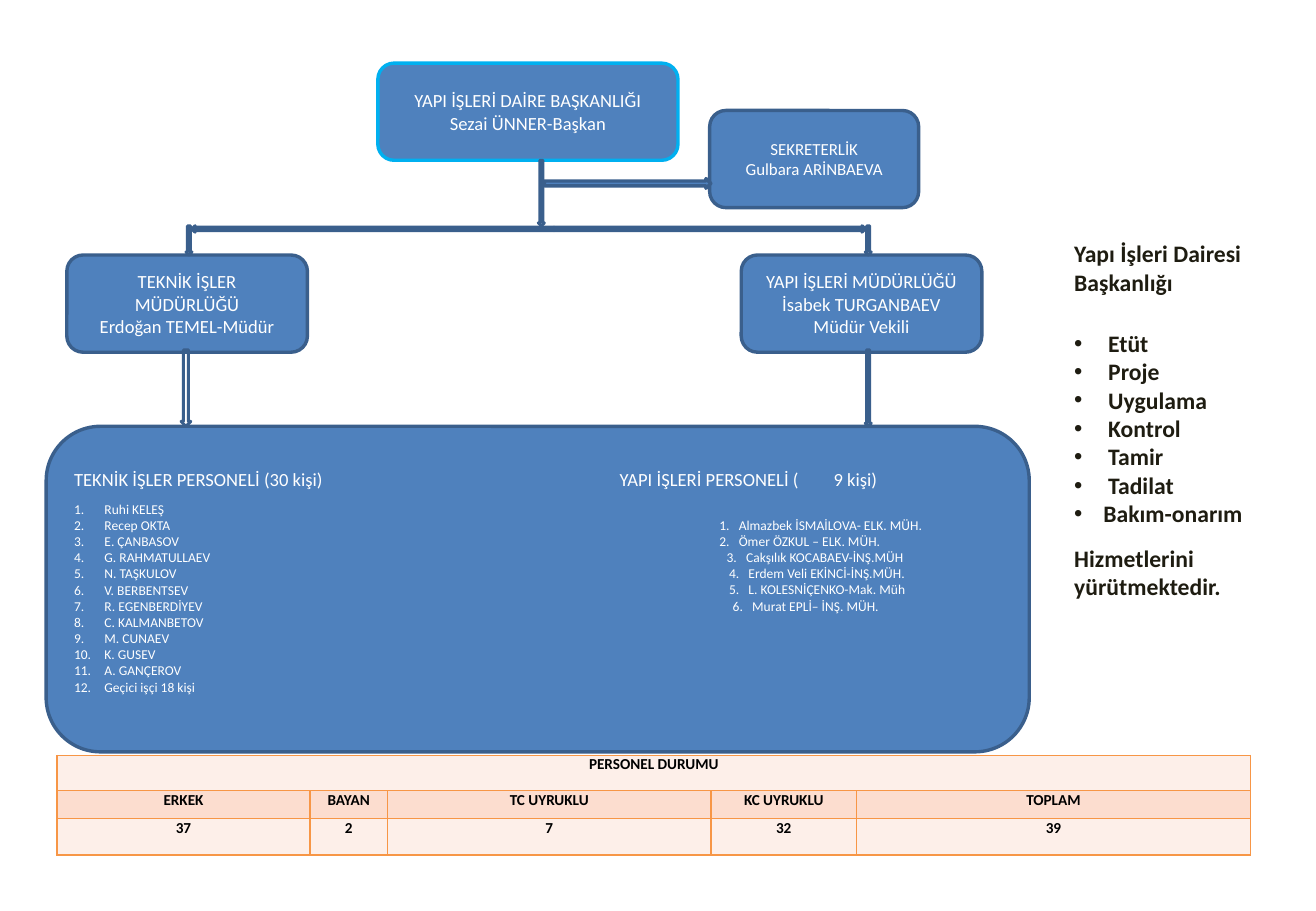
from lxml import etree
from pptx import Presentation
from pptx.dml.color import RGBColor
from pptx.enum.shapes import MSO_SHAPE
from pptx.enum.text import MSO_ANCHOR, PP_ALIGN
from pptx.oxml.ns import qn
from pptx.util import Inches, Pt

ROUNDED = MSO_SHAPE.ROUNDED_RECTANGLE
DOWN, LEFT, RIGHT = MSO_SHAPE.DOWN_ARROW, MSO_SHAPE.LEFT_ARROW, MSO_SHAPE.RIGHT_ARROW
MIDDLE, TOP = MSO_ANCHOR.MIDDLE, MSO_ANCHOR.TOP
CENTER = PP_ALIGN.CENTER

WHITE = RGBColor(0xFF, 0xFF, 0xFF)
BLACK = RGBColor(0x00, 0x00, 0x00)
INK = RGBColor(0x1E, 0x1C, 0x11)
BLUE = RGBColor(0x4F, 0x81, 0xBD)
NAVY = RGBColor(0x3A, 0x5F, 0x8C)
CYAN = RGBColor(0x00, 0xB0, 0xF0)
ORANGE = RGBColor(0xF7, 0x96, 0x46)
PEACH = RGBColor(0xFC, 0xDD, 0xCF)
PALE_PEACH = RGBColor(0xFD, 0xEF, 0xE9)

TECHNICAL_STAFF = ["Ruhi KELEŞ", "Recep OKTA", "E. ÇANBASOV", "G. RAHMATULLAEV",
                   "N. TAŞKULOV", "V. BERBENTSEV", "R. EGENBERDİYEV", "C. KALMANBETOV",
                   "M. CUNAEV", "K. GUSEV", "A. GANÇEROV", "Geçici işçi 18 kişi"]
# Name and left edge of its number
BUILDING_STAFF = [("Almazbek İSMAİLOVA- ELK. MÜH.", 0.82), ("Ömer ÖZKUL – ELK. MÜH.", 0.82),
                  ("Cakşılık KOCABAEV-İNŞ.MÜH", 0.88), ("Erdem Veli EKİNCİ-İNŞ.MÜH.", 0.9),
                  ("L. KOLESNİÇENKO-Mak. Müh", 0.9), ("Murat EPLİ– İNŞ. MÜH.", 0.93)]
SERVICES = ["Etüt", "Proje", "Uygulama", "Kontrol", "Tamir", "Tadilat"]
STAFF_TABLE = [["PERSONEL DURUMU", "", "", "", ""],
               ["ERKEK", "BAYAN", "TC UYRUKLU", "KC UYRUKLU", "TOPLAM"],
               ["37", "2", "7", "32", "39"]]


class OrgSlide:
    font_name = "Calibri"

    def __init__(self, deck):
        self.slide = deck.slides.add_slide(deck.slide_layouts[6])

    def style(self, para, size, color, bold=False):
        for span in para.runs:
            span.font.name = self.font_name
            span.font.size = Pt(size)
            span.font.color.rgb = color
            span.font.bold = bold

    def shape(self, kind, bounds, fill=BLUE, line=NAVY, width=2):
        shape = self.slide.shapes.add_shape(kind, *map(Inches, bounds))
        shape.shadow.inherit = False
        if fill is None:
            shape.fill.background()
        else:
            shape.fill.solid()
            shape.fill.fore_color.rgb = fill
        shape.line.color.rgb = line
        shape.line.width = Pt(width)
        return shape

    def unit(self, bounds, lines, size=11, line=NAVY):
        """Draw one named office of the chart."""
        frame = self.shape(ROUNDED, bounds, line=line).text_frame
        frame.vertical_anchor = MIDDLE
        frame.text = "\n".join(lines)
        for para in frame.paragraphs:
            para.alignment = CENTER
            self.style(para, size, WHITE)

    def text_box(self, bounds, heading, size, color, bold=False):
        frame = self.slide.shapes.add_textbox(*map(Inches, bounds)).text_frame
        frame.word_wrap = True
        frame.margin_left = frame.margin_right = 0
        frame.margin_top = frame.margin_bottom = 0
        frame.text = heading
        self.style(frame.paragraphs[0], size, color, bold)
        return frame

    def add_line(self, frame, text, size, color, bold=False, before=0):
        para = frame.add_paragraph()
        para.text = text
        para.space_before = Pt(before)
        self.style(para, size, color, bold)
        return para

    def mark(self, para, left, hang, tag, **attributes):
        """Give a paragraph a hanging bullet or number."""
        properties = para._p.get_or_add_pPr()
        properties.set("marL", str(Inches(left + hang)))
        properties.set("indent", str(-Inches(hang)))
        font = etree.SubElement(properties, qn("a:buFont"))
        font.set("typeface", "Arial" if tag == "a:buChar" else self.font_name)
        etree.SubElement(properties, qn(tag), attributes)

    def numbered(self, frame, entries, hang, before):
        for number, (text, left) in enumerate(entries, 1):
            para = self.add_line(frame, text, 8, WHITE, before=before if number == 1 else 0)
            self.mark(para, left, hang, "a:buAutoNum", type="arabicPeriod",
                      startAt=str(number))

    def tab_stop(self, para, position):
        tabs = etree.SubElement(para._p.get_or_add_pPr(), qn("a:tabLst"))
        etree.SubElement(tabs, qn("a:tab"), pos=str(Inches(position)), algn="l")

    def cell_border(self, cell):
        properties = cell._tc.get_or_add_tcPr()
        for side in ("a:lnL", "a:lnR", "a:lnT", "a:lnB"):
            line = etree.SubElement(properties, qn(side), w=str(Pt(1)))
            fill = etree.SubElement(line, qn("a:solidFill"))
            etree.SubElement(fill, qn("a:srgbClr"), val=str(ORANGE))

    def table(self, left, top, widths, heights, rows):
        bounds = (left, top, sum(widths), sum(heights))
        table = self.slide.shapes.add_table(len(rows), len(widths), *map(Inches, bounds)).table
        table.first_row = table.horz_banding = False
        for column, width in zip(table.columns, widths):
            column.width = Inches(width)
        for row, height in zip(table.rows, heights):
            row.height = Inches(height)
        for row_index, texts in enumerate(rows):
            for column_index, text in enumerate(texts):
                cell = table.cell(row_index, column_index)
                self.cell_border(cell)
                cell.fill.solid()
                cell.fill.fore_color.rgb = PEACH if row_index == 1 else PALE_PEACH
                cell.margin_left = cell.margin_right = Inches(0.02)
                cell.margin_top = cell.margin_bottom = 0
                cell.vertical_anchor = TOP
                para = cell.text_frame.paragraphs[0]
                para.text = text
                para.alignment = CENTER
                self.style(para, 9, BLACK, True)
        table.cell(0, 0).merge(table.cell(0, len(widths) - 1))


def main():
    deck = Presentation()
    deck.slide_width, deck.slide_height = Inches(10.83), Inches(7.5)
    page = OrgSlide(deck)

    page.table(0.47, 6.22, [2.08, 0.64, 2.66, 1.2, 3.24], [0.29, 0.23, 0.3], STAFF_TABLE)

    duties = page.text_box((8.84, 1.97, 1.6, 3), "Yapı İşleri Dairesi Başkanlığı", 14, INK, True)
    for index, service in enumerate(SERVICES):
        para = page.add_line(duties, service, 14, INK, True, 0 if index else 19.5)
        page.mark(para, 0, 0.28, "a:buChar", char="•")
    para = page.add_line(duties, "Bakım-onarım", 14, INK, True)
    page.mark(para, 0, 0.24, "a:buChar", char="•")
    page.add_line(duties, "Hizmetlerini", 14, INK, True, 9.5)
    page.add_line(duties, "yürütmektedir.", 14, INK, True)

    page.unit((3.11, 0.52, 2.47, 0.8),
              ["YAPI İŞLERİ DAİRE BAŞKANLIĞI", "Sezai ÜNNER-Başkan"], line=CYAN)
    page.unit((6.1, 2.1, 1.98, 0.8),
              ["YAPI İŞLERİ MÜDÜRLÜĞÜ", "İsabek TURGANBAEV", "Müdür Vekili"])
    page.unit((0.55, 2.1, 1.98, 0.8), ["TEKNİK İŞLER MÜDÜRLÜĞÜ", "Erdoğan TEMEL-Müdür"])
    page.unit((5.84, 0.91, 1.72, 0.8), ["SEKRETERLİK", "Gulbara ARİNBAEVA"], size=10)

    page.shape(ROUNDED, (0.38, 3.51, 8.09, 2.68))
    technical = page.text_box((0.61, 3.85, 3, 2), "TEKNİK İŞLER PERSONELİ (30 kişi)", 11, WHITE)
    page.numbered(technical, [(name, 0) for name in TECHNICAL_STAFF], 0.25, 6.5)
    building = page.text_box((5.1, 3.85, 3, 2), "YAPI İŞLERİ PERSONELİ (\t9 kişi)", 11, WHITE)
    page.tab_stop(building.paragraphs[0], 1.76)
    page.numbered(building, BUILDING_STAFF, 0.16, 16)

    for bounds in [(4.43, 1.32, 0.05, 0.54), (1.49, 2.88, 0.08, 0.63), (7.12, 2.88, 0.05, 0.63),
                   (1.53, 1.86, 0.05, 0.24), (7.12, 1.86, 0.05, 0.24)]:
        page.shape(DOWN, bounds, fill=None, width=1.75)
    page.shape(RIGHT, (4.48, 1.47, 1.37, 0.08))
    page.shape(RIGHT, (4.56, 1.86, 2.56, 0.05))
    page.shape(LEFT, (1.58, 1.86, 2.98, 0.05))

    deck.save("out.pptx")


if __name__ == "__main__":
    main()
